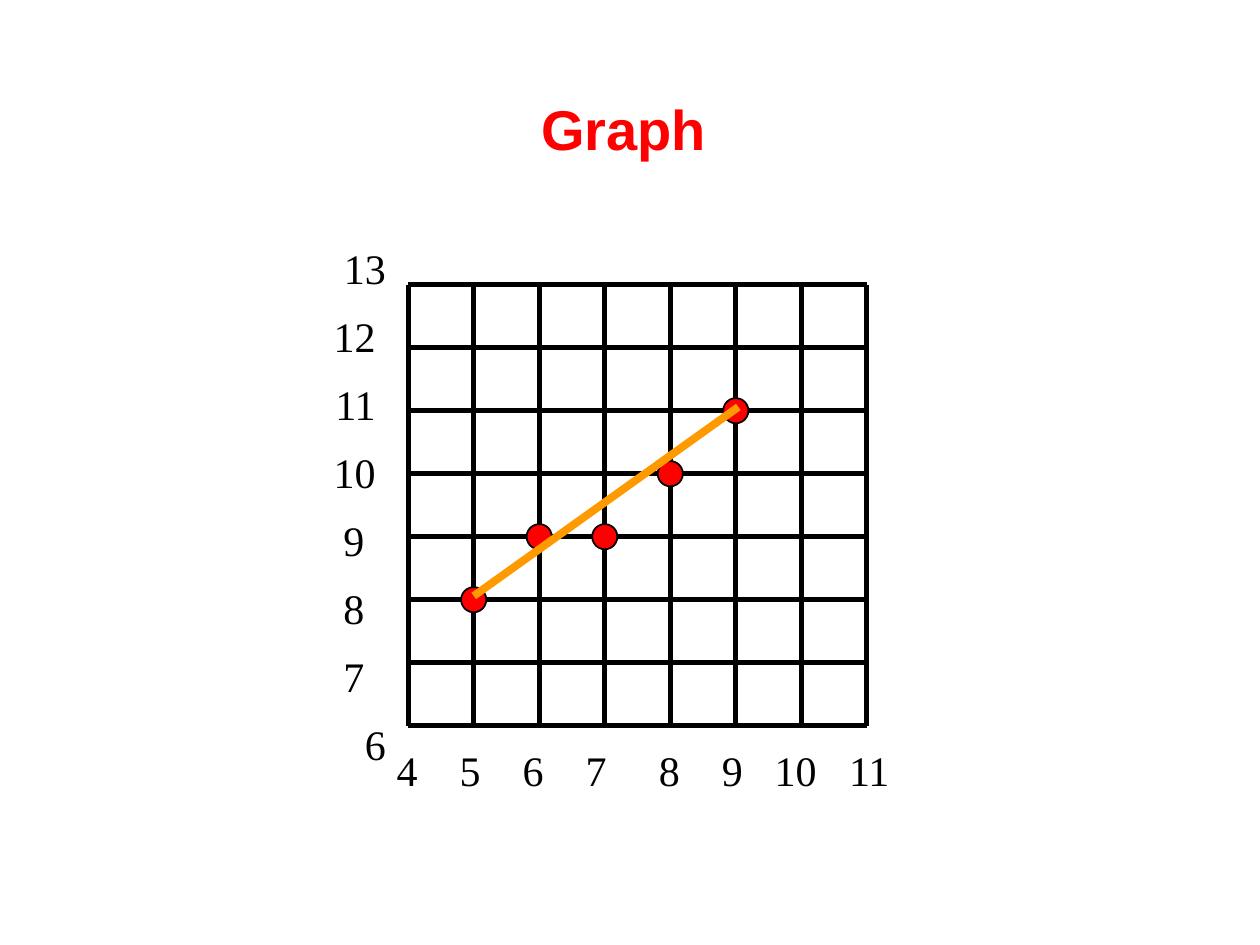
from dataclasses import dataclass

from lxml.etree import SubElement
from pptx import Presentation
from pptx.dml.color import RGBColor
from pptx.enum.shapes import MSO_CONNECTOR, MSO_SHAPE
from pptx.enum.text import MSO_ANCHOR, PP_ALIGN
from pptx.oxml.ns import qn
from pptx.util import Inches, Pt


@dataclass(frozen=True)
class Theme:
    black: str = "000000"
    red: str = "FF0000"
    orange: str = "FF9900"
    title_font: str = "Arial"
    label_font: str = "Times New Roman"
    title_size: float = 32
    label_size: float = 24
    grid_width: float = 3
    trend_width: float = 4.5
    outline_width: float = 1


class GraphSlide:
    def __init__(self, slide, theme):
        self.slide = slide
        self.theme = theme

    def text_box(self, left, top, width, height, inset_right=0.1):
        box = self.slide.shapes.add_textbox(
            Inches(left), Inches(top), Inches(width), Inches(height))
        frame = box.text_frame
        frame.word_wrap = True
        frame.vertical_anchor = MSO_ANCHOR.MIDDLE
        frame.margin_right = Inches(inset_right)
        return frame

    def run(self, paragraph, text, font, size, color, bold=False):
        run = paragraph.add_run()
        run.text = text
        run.font.name = font
        run.font.size = Pt(size)
        run.font.bold = bold
        run.font.color.rgb = RGBColor.from_string(color)

    def label(self, paragraph, text):
        self.run(paragraph, text, self.theme.label_font,
                 self.theme.label_size, self.theme.black)

    def title(self, text):
        heading = self.text_box(0.7, 0.42, 8.5, 1.19).paragraphs[0]
        heading.alignment = PP_ALIGN.CENTER
        self.run(heading, text, self.theme.title_font,
                 self.theme.title_size, self.theme.red, bold=True)

    def y_labels(self, labels):
        """Stack (value, right indent) labels from top to bottom."""
        frame = self.text_box(2.42, 1.57, 0.74, 4.75)
        for index, (value, indent) in enumerate(labels):
            row = frame.paragraphs[0] if index == 0 else frame.add_paragraph()
            row.alignment = PP_ALIGN.RIGHT
            row.line_spacing = 1.35
            row._p.get_or_add_pPr().set("marR", str(Inches(indent)))
            self.label(row, str(value))

    def x_labels(self, values, tab_stops):
        row = self.text_box(3.05, 5.86, 4.12, 0.5, inset_right=0).paragraphs[0]
        tabs = SubElement(row._p.get_or_add_pPr(), qn("a:tabLst"))
        for stop in tab_stops:
            SubElement(tabs, qn("a:tab"), pos=str(Inches(stop)), algn="l")
        self.label(row, "\t".join(str(value) for value in values))

    def line(self, start, end, color, width):
        line = self.slide.shapes.add_connector(
            MSO_CONNECTOR.STRAIGHT, *(Inches(v) for v in (*start, *end)))
        line.line.color.rgb = RGBColor.from_string(color)
        line.line.width = Pt(width)
        SubElement(line._element.spPr, qn("a:effectLst"))

    def marker(self, center, size=0.2):
        x, y = center
        dot = self.slide.shapes.add_shape(
            MSO_SHAPE.OVAL, Inches(x - size / 2), Inches(y - size / 2),
            Inches(size), Inches(size))
        dot.shadow.inherit = False
        dot.fill.solid()
        dot.fill.fore_color.rgb = RGBColor.from_string(self.theme.red)
        dot.line.color.rgb = RGBColor.from_string(self.theme.black)
        dot.line.width = Pt(self.theme.outline_width)


X_VALUES = range(4, 12)
Y_VALUES = range(6, 14)
POINTS = [(5, 8), (6, 9), (7, 9), (8, 10), (9, 11)]
X_TAB_STOPS = [0.5, 1, 1.5, 2.08, 2.58, 3, 3.59]
Y_INDENTS = [0, 0.08, 0.08, 0.08, 0.17, 0.17, 0.17, 0]


def locate(x, y):
    """Turn graph coordinates into inches on the slide."""
    return 3.24 + 0.52 * (x - X_VALUES[0]), 5.76 - 0.5 * (y - Y_VALUES[0])


def main():
    deck = Presentation()
    deck.slide_width, deck.slide_height = Inches(10), Inches(7.5)
    theme = Theme()
    graph = GraphSlide(deck.slides.add_slide(deck.slide_layouts[6]), theme)

    graph.title("Graph")
    graph.y_labels(zip(reversed(Y_VALUES), Y_INDENTS))
    graph.x_labels(X_VALUES, X_TAB_STOPS)

    for x in X_VALUES:
        graph.line(locate(x, Y_VALUES[0]), locate(x, Y_VALUES[-1]),
                   theme.black, theme.grid_width)
    for y in Y_VALUES:
        graph.line(locate(X_VALUES[0], y), locate(X_VALUES[-1], y),
                   theme.black, theme.grid_width)
    for point in POINTS:
        graph.marker(locate(*point))
    graph.line((3.76, 4.73), (5.86, 3.23), theme.orange, theme.trend_width)

    deck.save("out.pptx")


if __name__ == "__main__":
    main()
